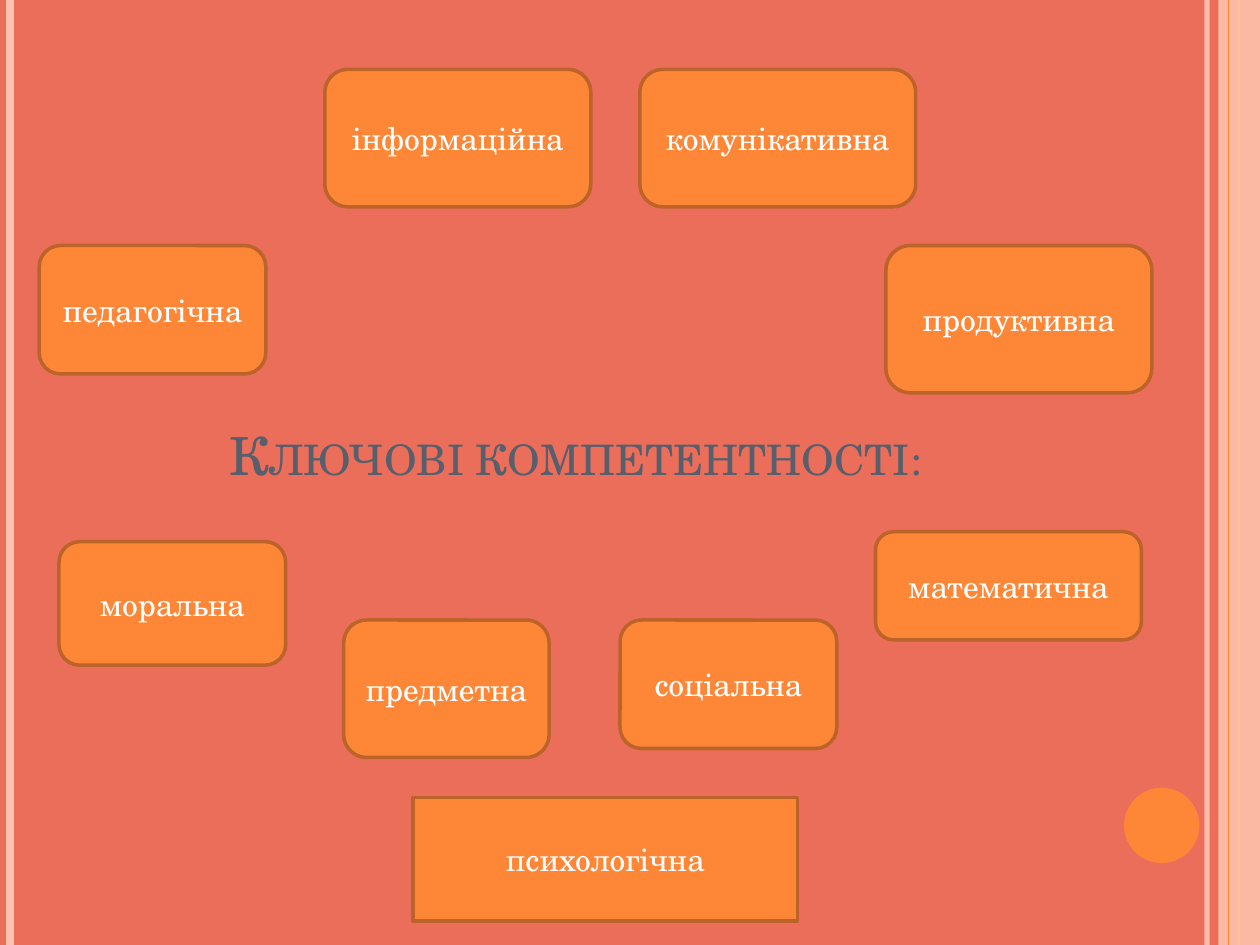
"""Build the slide of key competences."""
from dataclasses import dataclass

from lxml import etree
from pptx import Presentation
from pptx.dml.color import RGBColor
from pptx.enum.shapes import MSO_CONNECTOR, MSO_SHAPE
from pptx.enum.text import MSO_ANCHOR, PP_ALIGN
from pptx.oxml.ns import qn
from pptx.util import Cm, Pt

ROUND = MSO_SHAPE.FLOWCHART_ALTERNATE_PROCESS
BLOCK = MSO_SHAPE.FLOWCHART_PROCESS
RECT = MSO_SHAPE.RECTANGLE
OVAL = MSO_SHAPE.OVAL
STRAIGHT = MSO_CONNECTOR.STRAIGHT
MIDDLE = MSO_ANCHOR.MIDDLE
BOTTOM = MSO_ANCHOR.BOTTOM
CENTER = PP_ALIGN.CENTER
LEFT = PP_ALIGN.LEFT

CORAL = RGBColor(0xEB, 0x6E, 0x5A)
PEACH = RGBColor(0xFE, 0xC3, 0xAE)
ORANGE = RGBColor(0xFE, 0x86, 0x37)
BROWN = RGBColor(0xBC, 0x63, 0x29)
SLATE = RGBColor(0x57, 0x5F, 0x6D)
WHITE = RGBColor(0xFF, 0xFF, 0xFF)
FONT = "TeX Gyre Schola"
WIDE, HIGH = 25.4, 19.05


@dataclass
class Box:
    text: str
    left: float
    top: float
    width: float
    height: float
    kind: int = ROUND


@dataclass
class Stripe:
    left: float
    weight: float
    color: RGBColor
    alpha: int = 100


BOXES = [
    Box("педагогічна", 0.79, 4.95, 4.57, 2.59),
    Box("інформаційна", 6.55, 1.4, 5.36, 2.77),
    Box("комунікативна", 12.9, 1.4, 5.56, 2.77),
    Box("продуктивна", 17.86, 4.95, 5.36, 2.97),
    Box("моральна", 1.19, 10.92, 4.57, 2.49),
    Box("предметна", 6.93, 12.5, 4.14, 2.77),
    Box("соціальна", 12.5, 12.5, 4.37, 2.59),
    Box("математична", 17.65, 10.72, 5.36, 2.18),
    Box("психологічна", 8.33, 16.08, 7.75, 2.49, BLOCK),
]
BACK = [
    Stripe(24.33, 3, PEACH, 93),
    Stripe(0.21, 4.5, PEACH),
    Stripe(24.97, 1.5, ORANGE),
]
FRONT = Stripe(24.77, 0.75, ORANGE)
BAND = Box("", 24.56, 0, 0.84, HIGH, RECT)
DOT = Box("", 22.66, 15.88, 1.52, 1.52, OVAL)
TITLE = Box("Ключові компетентності:", 4.37, 6.35, 18.47, 3.58)


def fade(part, alpha: int) -> None:
    """Set the opacity of the first colour in a part, in percent."""
    if alpha < 100:
        tone = next(part.iter(qn("a:srgbClr")))
        etree.SubElement(tone, qn("a:alpha")).set("val", str(alpha * 1000))


def place(box: Box) -> tuple:
    """Return the box bounds as lengths."""
    return Cm(box.left), Cm(box.top), Cm(box.width), Cm(box.height)


def write(shape, text: str, *, size: float = 18, color: RGBColor = WHITE,
          align: int = CENTER, anchor: int = MIDDLE, small: bool = False) -> None:
    """Put formatted text into a shape."""
    frame = shape.text_frame
    frame.word_wrap = True
    frame.vertical_anchor = anchor
    line = frame.paragraphs[0]
    line.alignment = align
    run = line.add_run()
    run.text = text
    run.font.name = FONT
    run.font.size = Pt(size)
    run.font.color.rgb = color
    if small:
        run._r.get_or_add_rPr().set("cap", "small")


def draw_stripe(slide, stripe: Stripe) -> None:
    """Draw a line down the full slide height."""
    left = Cm(stripe.left)
    line = slide.shapes.add_connector(STRAIGHT, left, 0, left, Cm(HIGH))
    line.line.color.rgb = stripe.color
    line.line.width = Pt(stripe.weight)
    fade(line._element, stripe.alpha)
    etree.SubElement(line._element.spPr, qn("a:effectLst"))


def draw_box(slide, box: Box, fill: RGBColor = ORANGE, alpha: int = 100) -> None:
    """Draw a filled shape, outlined when it holds text."""
    shape = slide.shapes.add_shape(box.kind, *place(box))
    shape.shadow.inherit = False
    shape.fill.solid()
    shape.fill.fore_color.rgb = fill
    fade(shape._element, alpha)
    if box.text:
        shape.line.color.rgb = BROWN
        shape.line.width = Pt(2)
        write(shape, box.text)
    else:
        shape.line.fill.background()


def main() -> None:
    """Build and save the deck."""
    deck = Presentation()
    deck.slide_width, deck.slide_height = Cm(WIDE), Cm(HIGH)
    slide = deck.slides.add_slide(deck.slide_layouts[6])
    slide.background.fill.solid()
    slide.background.fill.fore_color.rgb = CORAL
    for stripe in BACK:
        draw_stripe(slide, stripe)
    draw_box(slide, BAND, PEACH, 87)
    draw_stripe(slide, FRONT)
    draw_box(slide, DOT)
    title = slide.shapes.add_textbox(*place(TITLE))
    write(title, TITLE.text, size=30, color=SLATE, align=LEFT,
          anchor=BOTTOM, small=True)
    for box in BOXES:
        draw_box(slide, box)
    deck.save("out.pptx")


if __name__ == "__main__":
    main()
